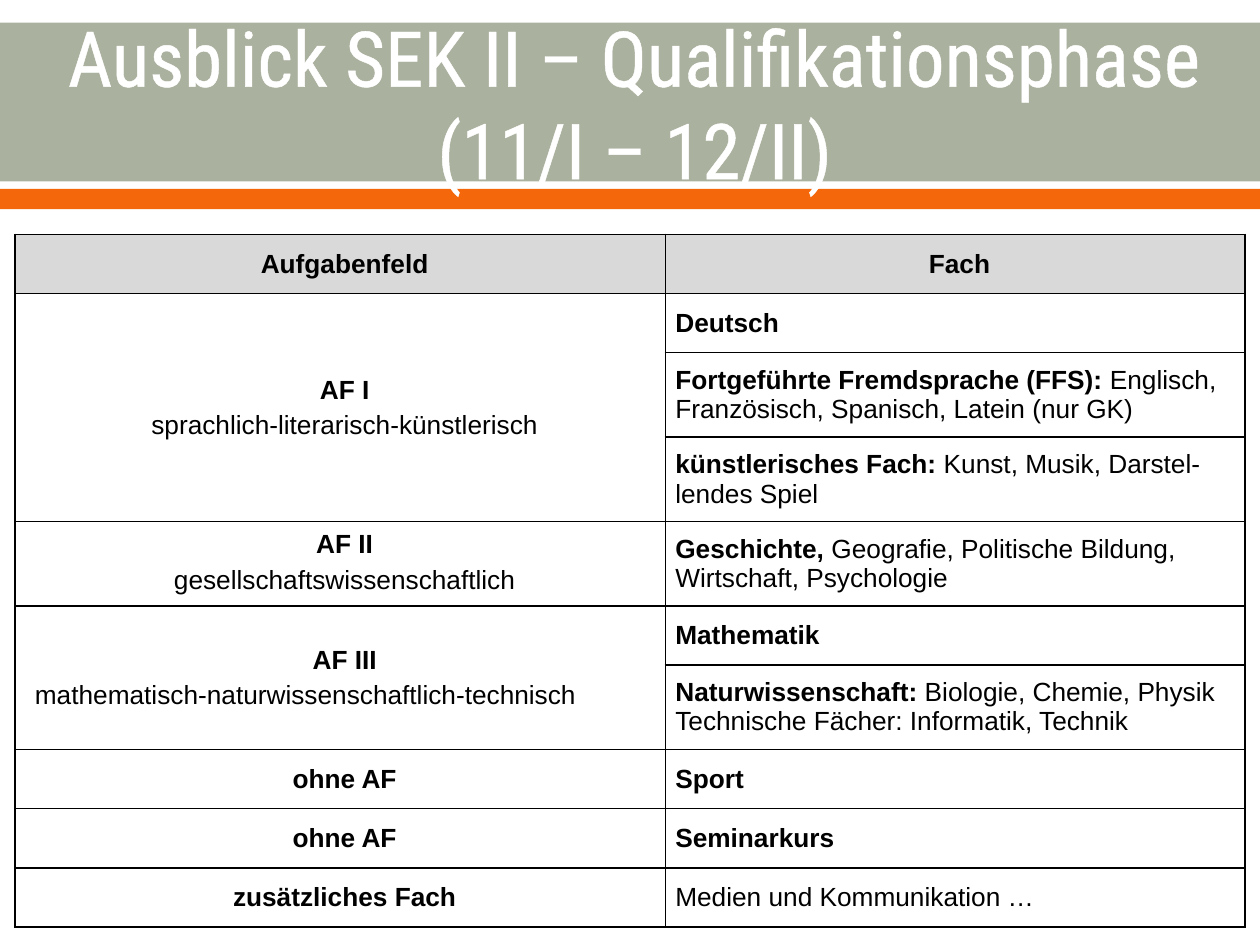
import pptx
import pptx.util
from lxml import etree
from pptx.dml.color import RGBColor
from pptx.enum.shapes import MSO_SHAPE
from pptx.enum.text import MSO_ANCHOR, PP_ALIGN
from pptx.oxml.ns import qn
from pptx.util import Inches, Pt

SAGE = RGBColor(0xAB, 0xB1, 0x9F)
ORANGE = RGBColor(0xF4, 0x68, 0x0B)
WHITE = RGBColor(0xFF, 0xFF, 0xFF)
BLACK = RGBColor(0, 0, 0)
HEADER_GREY = RGBColor(0xD9, 0xD9, 0xD9)

COLUMN_WIDTHS = (5.16, 4.6)
ONE_LINE, TWO_LINES = 0.47, 0.67
TIGHT = dict(spacing=0.86, before=5.5)

# Each field: its lines (text, format), then its subjects (height, bold, plain).
FIELDS = [
    ([("AF I", dict(before=1.4)),
      ("sprachlich-literarisch-künstlerisch", TIGHT)],
     [(ONE_LINE, "Deutsch", ""),
      (TWO_LINES, "Fortgeführte Fremdsprache (FFS): ",
       "Englisch, Französisch, Spanisch, Latein (nur GK)"),
      (TWO_LINES, "künstlerisches Fach:",
       " Kunst, Musik, Darstel-lendes Spiel")]),
    ([("AF II", dict(spacing=Pt(15.3), before=0)),
      ("gesellschaftswissenschaftlich", dict(spacing=Pt(17.1), before=3.5))],
     [(TWO_LINES, "Geschichte, ",
       "Geografie, Politische Bildung, Wirtschaft, Psychologie")]),
    ([("AF III", dict(spacing=Pt(16.7), before=0)),
      ("mathematisch-naturwissenschaftlich-technisch",
       dict(TIGHT, right_indent=0.62))],
     [(ONE_LINE, "Mathematik", ""),
      (TWO_LINES, "Naturwissenschaft:",
       " Biologie, Chemie, Physik Technische Fächer: Informatik, Technik")]),
    ([("ohne AF", {})], [(ONE_LINE, "Sport", "")]),
    ([("ohne AF", {})], [(ONE_LINE, "Seminarkurs", "")]),
    ([("zusätzliches Fach", {})],
     [(ONE_LINE, "", "Medien und Kommunikation …")]),
]


def add_line(parent, tag, color, width):
    line = etree.SubElement(parent, qn(tag), w=str(Pt(width)))
    fill = etree.SubElement(line, qn("a:solidFill"))
    etree.SubElement(fill, qn("a:srgbClr"), val=str(color))
    return line


def write(paragraph, bold="", plain="", size=15, font="Arial", color=BLACK,
          align=PP_ALIGN.LEFT, before=3.1, spacing=1.0, indent=0.07,
          right_indent=0, outline=None):
    """Fill a paragraph with a bold part followed by a plain part."""
    paragraph.alignment = align
    paragraph.space_before = Pt(before)
    paragraph.line_spacing = spacing
    properties = paragraph._p.get_or_add_pPr()
    properties.set("marL", str(Inches(indent)))
    properties.set("marR", str(Inches(right_indent)))
    properties.set("indent", "0")
    for text, is_bold in ((bold, True), (plain, False)):
        if not text:
            continue
        run = paragraph.add_run()
        run.text = text
        if outline:
            add_line(run._r.get_or_add_rPr(), "a:ln", color, outline)
        run.font.size = Pt(size)
        run.font.name = font
        run.font.bold = is_bold
        run.font.color.rgb = color


class SlideBuilder:
    title_style = dict(size=44, font="Roboto Condensed", color=WHITE,
                       align=PP_ALIGN.CENTER, before=0, indent=0, outline=1.1)

    def __init__(self, slide):
        self.slide = slide

    def band(self, top, height, color):
        band = self.slide.shapes.add_shape(
            MSO_SHAPE.RECTANGLE, 0, Inches(top), Inches(10), Inches(height))
        band.shadow.inherit = False
        band.fill.solid()
        band.fill.fore_color.rgb = color
        band.line.fill.background()

    def title(self, text):
        box = self.slide.shapes.add_textbox(
            Inches(0.04), Inches(0.2), Inches(10), Inches(1.22))
        box.text_frame.word_wrap = True
        box.text_frame.vertical_anchor = MSO_ANCHOR.MIDDLE
        write(box.text_frame.paragraphs[0], plain=text, **self.title_style)

    def table(self, left, top, heights):
        table = self.slide.shapes.add_table(
            len(heights), len(COLUMN_WIDTHS), Inches(left), Inches(top),
            Inches(sum(COLUMN_WIDTHS)), Inches(sum(heights))).table
        for column, width in zip(table.columns, COLUMN_WIDTHS):
            column.width = Inches(width)
        for row, height in zip(table.rows, heights):
            row.height = Inches(height)
        for cell in table.iter_cells():
            self.style_cell(cell)
        return table

    def style_cell(self, cell):
        cell.margin_left = cell.margin_right = 0
        cell.margin_top = cell.margin_bottom = 0
        cell.vertical_anchor = MSO_ANCHOR.MIDDLE
        for side in ("a:lnL", "a:lnR", "a:lnT", "a:lnB"):
            add_line(cell._tc.get_or_add_tcPr(), side, BLACK, 1)
        cell.fill.background()

    def header(self, cell, text):
        cell.fill.solid()
        cell.fill.fore_color.rgb = HEADER_GREY
        write(cell.text_frame.paragraphs[0], text, align=PP_ALIGN.CENTER)

    def field(self, cell, lines):
        """Write the bold field name and its plain description."""
        frame = cell.text_frame
        for number, (text, style) in enumerate(lines):
            paragraph = frame.add_paragraph() if number else frame.paragraphs[0]
            part = "plain" if number else "bold"
            write(paragraph, align=PP_ALIGN.CENTER, **{part: text}, **style)


def main():
    presentation = pptx.Presentation()
    presentation.slide_width = Inches(10)
    presentation.slide_height = Inches(7.5)
    blank = presentation.slide_layouts[6]
    builder = SlideBuilder(presentation.slides.add_slide(blank))

    builder.band(0.18, 1.26, SAGE)
    builder.band(1.5, 0.16, ORANGE)
    builder.title("Ausblick SEK II – Qualifikationsphase (11/I – 12/II)")

    heights = [ONE_LINE] + [subject[0] for _, subjects in FIELDS
                            for subject in subjects]
    table = builder.table(0.12, 1.86, heights)
    for column, heading in enumerate(("Aufgabenfeld", "Fach")):
        builder.header(table.cell(0, column), heading)

    row = 1
    for lines, subjects in FIELDS:
        field_cell = table.cell(row, 0)
        if len(subjects) > 1:
            field_cell.merge(table.cell(row + len(subjects) - 1, 0))
        builder.field(field_cell, lines)
        for _, bold, plain in subjects:
            subject_cell = table.cell(row, 1)
            write(subject_cell.text_frame.paragraphs[0], bold, plain,
                  indent=0.08)
            row += 1

    presentation.save("out.pptx")


if __name__ == "__main__":
    main()
